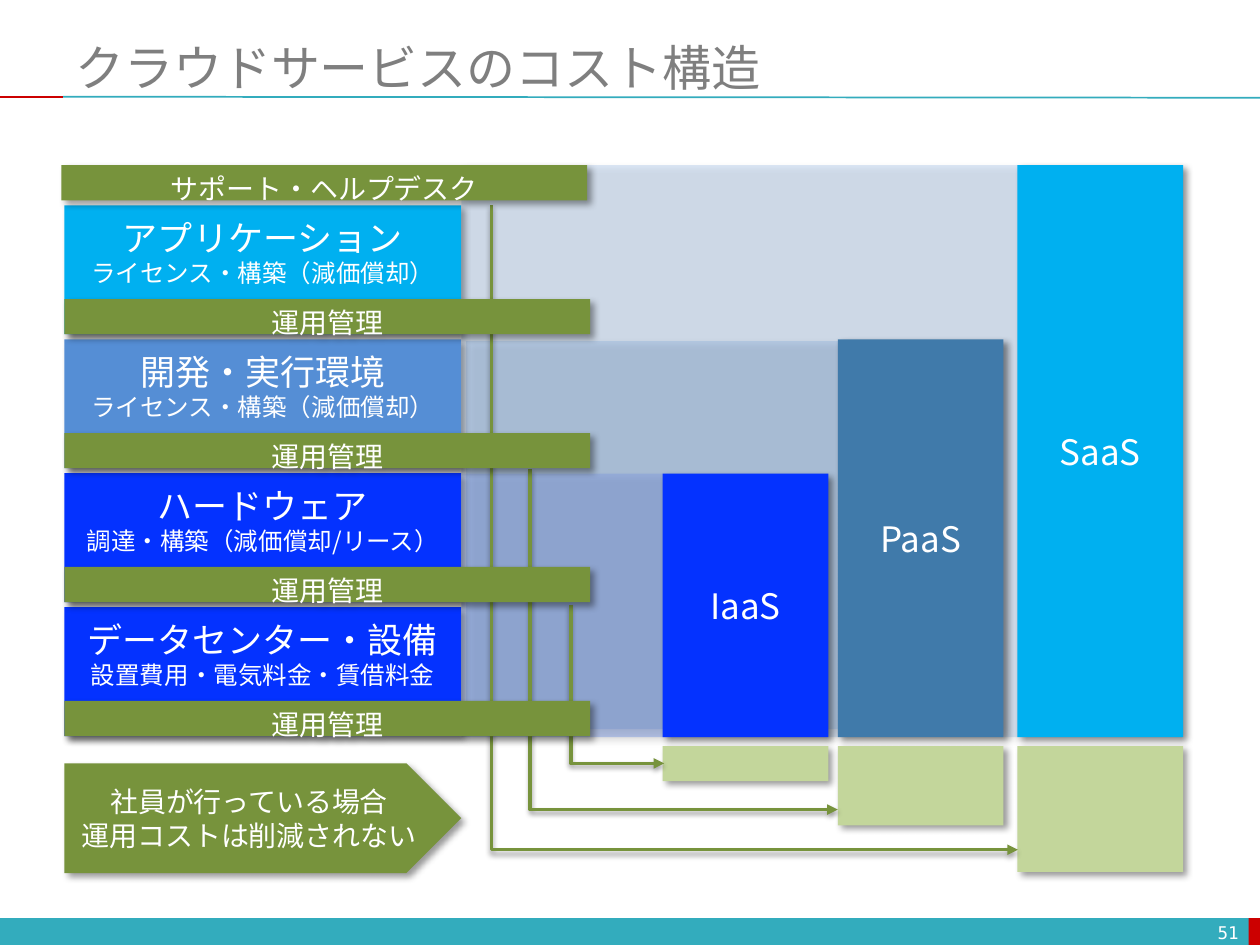
import pptx
import pptx.dml.color
import pptx.enum.shapes
import pptx.enum.text
import pptx.oxml
import pptx.oxml.ns
import pptx.util

Cm = pptx.util.Cm
Pt = pptx.util.Pt
RGBColor = pptx.dml.color.RGBColor
Shapes = pptx.enum.shapes.MSO_SHAPE
Connectors = pptx.enum.shapes.MSO_CONNECTOR
Align = pptx.enum.text.PP_ALIGN
Anchor = pptx.enum.text.MSO_ANCHOR
qn = pptx.oxml.ns.qn

WHITE = RGBColor(0xFF, 0xFF, 0xFF)
GRAY = RGBColor(0x7F, 0x7F, 0x7F)
TEAL = RGBColor(0x33, 0xAC, 0xBD)
RED = RGBColor(0xCC, 0x00, 0x00)
SKY = RGBColor(0x00, 0xB0, 0xF0)
SOFT_BLUE = RGBColor(0x55, 0x8E, 0xD5)
DEEP_BLUE = RGBColor(0x04, 0x32, 0xFF)
STEEL = RGBColor(0x40, 0x7A, 0xAA)
GREEN = RGBColor(0x77, 0x93, 0x3C)
PALE_GREEN = RGBColor(0xC3, 0xD6, 0x9B)


def element(tag, **attributes):
    node = pptx.oxml.parse_xml(f"<a:{tag} {pptx.oxml.ns.nsdecls('a')}/>")
    for name, value in attributes.items():
        node.set(name, str(value))
    return node


class SlideBuilder:
    font_name = "Noto Sans CJK JP"

    def __init__(self, slide):
        self.slide = slide

    def add_shadow(self, shape, blur, distance, angle, opacity):
        color = element("srgbClr", val="000000")
        color.append(element("alpha", val=opacity * 1000))
        shadow = element("outerShdw", blurRad=int(Pt(blur)), dist=int(Pt(distance)),
                         dir=angle * 60000, algn="tl", rotWithShape=0)
        shadow.append(color)
        effects = element("effectLst")
        effects.append(shadow)
        shape._element.spPr.append(effects)

    def set_text(self, shape, lines, color=WHITE, font_name=None, align=Align.CENTER,
                 anchor=Anchor.MIDDLE):
        """Fill a shape with (text, size) lines."""
        font_name = font_name or self.font_name
        frame = shape.text_frame
        frame.word_wrap = True
        frame.vertical_anchor = anchor
        for index, (text, size) in enumerate(lines):
            paragraph = frame.add_paragraph() if index else frame.paragraphs[0]
            paragraph.text = text
            paragraph.alignment = align
            paragraph.font.size = Pt(size)
            paragraph.font.color.rgb = color
            paragraph.font.name = font_name
            defaults = paragraph._p.pPr.find(qn("a:defRPr"))
            defaults.append(element("ea", typeface=self.font_name))

    def text(self, left, top, width, height, text, size, **style):
        box = self.slide.shapes.add_textbox(Cm(left), Cm(top), Cm(width), Cm(height))
        self.set_text(box, [(text, size)], **style)

    def block(self, left, top, width, height, color, lines=(), kind=Shapes.RECTANGLE,
              opacity=None, shadow=True, anchor=Anchor.MIDDLE):
        shape = self.slide.shapes.add_shape(kind, Cm(left), Cm(top), Cm(width), Cm(height))
        shape.fill.solid()
        shape.fill.fore_color.rgb = color
        shape.line.fill.background()
        if opacity is not None:
            fill_color = shape._element.spPr.find(qn("a:solidFill"))[0]
            fill_color.append(element("alpha", val=opacity * 1000))
        if shadow:
            self.add_shadow(shape, 4, 3, 45, 40)
        else:
            shape.shadow.inherit = False
        self.set_text(shape, lines, anchor=anchor)
        return shape

    def line(self, x1, y1, x2, y2, color):
        connector = self.slide.shapes.add_connector(
            Connectors.STRAIGHT, Cm(x1), Cm(y1), Cm(x2), Cm(y2))
        connector.line.color.rgb = color
        connector.line.width = Pt(1)
        connector._element.spPr.append(element("effectLst"))

    def down_then_right_arrow(self, x1, y1, x2, y2):
        """One-corner connector: a flipped box turned by 270 degrees."""
        center_x, center_y = (x1 + x2) / 2, (y1 + y2) / 2
        half_drop, half_run = (y2 - y1) / 2, (x2 - x1) / 2
        connector = self.slide.shapes.add_connector(
            Connectors.ELBOW,
            Cm(center_x + half_drop), Cm(center_y - half_run),
            Cm(center_x - half_drop), Cm(center_y + half_run))
        properties = connector._element.spPr
        properties.find(qn("a:xfrm")).set("rot", str(270 * 60000))
        properties.find(qn("a:prstGeom")).set("prst", "bentConnector2")
        connector.line.color.rgb = GREEN
        connector.line.width = Pt(2)
        properties.find(qn("a:ln")).append(element("tailEnd", type="triangle"))
        self.add_shadow(connector, 3.1, 1.6, 90, 38)


def main():
    presentation = pptx.Presentation()
    presentation.slide_width = Cm(25.4)
    presentation.slide_height = Cm(19.05)
    builder = SlideBuilder(presentation.slides.add_slide(presentation.slide_layouts[6]))

    # Footer band and title rule
    builder.block(0, 18.51, 25.4, 0.54, TEAL, shadow=False)
    builder.block(25.17, 18.51, 0.23, 0.54, RED, shadow=False)
    builder.line(1.27, 1.95, 25.4, 1.97, TEAL)
    builder.line(0, 1.95, 1.27, 1.95, RED)

    # Translucent range of each service
    builder.block(9.3, 3.33, 14.53, 11.53, SOFT_BLUE, opacity=20)
    builder.block(9.4, 6.88, 10.82, 7.82, SOFT_BLUE, opacity=20)
    builder.block(9.3, 9.55, 7.39, 5.31, DEEP_BLUE, opacity=11)

    # Title and page number
    builder.text(1.27, 0.76, 24.13, 1.17, "クラウドサービスのコスト構造", 28,
                 color=GRAY, font_name="Calibri", align=Align.LEFT)
    builder.text(19.3, 18.49, 5.92, 0.61, "51", 10,
                 font_name="DejaVu Sans Mono", align=Align.RIGHT)

    # Cost layers
    left, layer_top, pitch = 1.3, 4.14, 2.7
    layers = [
        ("アプリケーション", "ライセンス・構築（減価償却）", SKY),
        ("開発・実行環境", "ライセンス・構築（減価償却）", SOFT_BLUE),
        ("ハードウェア", "調達・構築（減価償却/リース）", DEEP_BLUE),
        ("データセンター・設備", "設置費用・電気料金・賃借料金", DEEP_BLUE),
    ]
    for index, (name, detail, color) in enumerate(layers):
        layer = builder.block(left, layer_top + index * pitch, 8, 2.6, color,
                              [(name, 20), (detail, 14)])
        layer.text_frame.margin_top = 0
        layer.text_frame.margin_bottom = Cm(0.72)

    # Service columns, with the operating cost left below each
    base, cost_top = 14.86, 15.04
    services = [
        ("IaaS", 13.36, 9.55, DEEP_BLUE, 0.71),
        ("PaaS", 16.89, 6.84, STEEL, 1.6),
        ("SaaS", 20.51, 3.33, SKY, 2.54),
    ]
    for name, x, top, color, cost_height in services:
        builder.block(x, top, 3.34, base - top, color, [(name, 20)])
        builder.block(x, cost_top, 3.34, cost_height, PALE_GREEN)

    # Arrows from operations to the remaining costs
    builder.down_then_right_arrow(11.51, 12.19, 13.39, 15.39)
    builder.down_then_right_arrow(10.69, 9.45, 16.89, 16.32)
    builder.down_then_right_arrow(9.91, 4.14, 20.52, 17.13)

    # Operation bars
    bars = [(1.24, 3.33, "サポート・ヘルプデスク")]
    bars += [(left, layer_top + 1.89 + index * pitch, "運用管理")
             for index in range(len(layers))]
    for x, top, name in bars:
        builder.block(x, top, 10.6, 0.71, GREEN, [(name, 16)], anchor=Anchor.TOP)

    # Note
    builder.block(left, 15.39, 8, 2.21, GREEN,
                  [("社員が行っている場合", 16), ("運用コストは削減されない", 16)],
                  kind=Shapes.PENTAGON)

    presentation.save("out.pptx")


if __name__ == "__main__":
    main()
